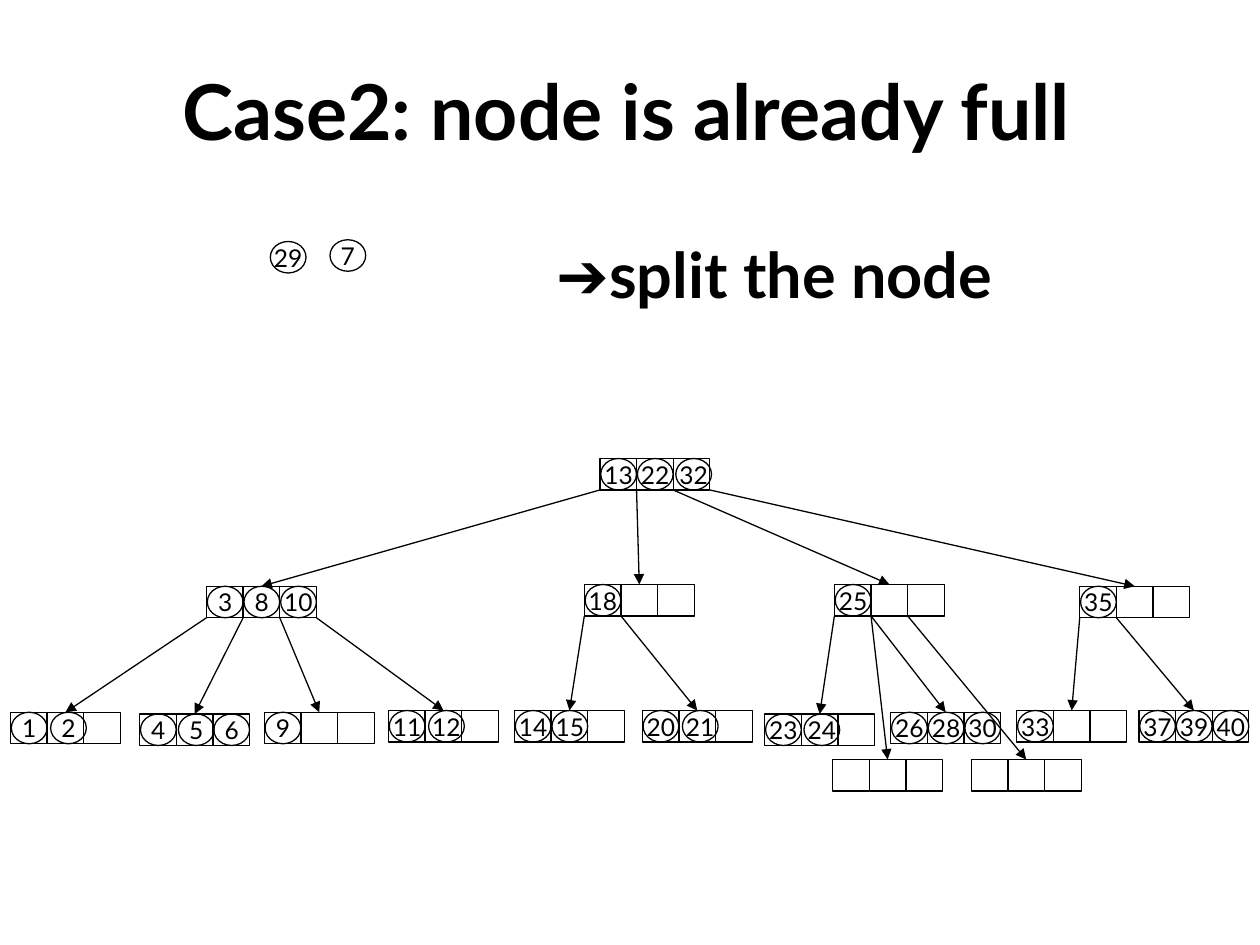
"""Build a slide showing a B-tree in which a full node is split."""
import pptx
import pptx.dml.color
import pptx.enum.shapes
import pptx.enum.text
import pptx.oxml
import pptx.oxml.ns
import pptx.util

Pt = pptx.util.Pt
BLACK = pptx.dml.color.RGBColor(0, 0, 0)
SHAPES = pptx.enum.shapes.MSO_SHAPE
ALIGN = pptx.enum.text.PP_ALIGN
MIDDLE = pptx.enum.text.MSO_ANCHOR.MIDDLE
SLOTS = 3
CELL_WIDTH, CELL_HEIGHT = 20.95, 18
KEY_WIDTH, KEY_INSET = 20.4, 0.5
NUDGES = {2: 1.5, 5: 0.7, 12: 1.5, 21: 1.5, 24: 1, 32: 1}

TREE = (342.8, 262, [13, 22, 32], [
    (0, (118, 335, [3, 8, 10], [
        (0, (6, 407, [1, 2], [])),
        (1, (79.8, 408, [4, 5, 6], [])),
        (2, (151, 407, [9], [])),
        (3, (222, 406, [11, 12], [])),
    ])),
    (1, (333.9, 334, [18], [
        (0, (294, 406, [14, 15], [])),
        (1, (367, 406, [20, 21], [])),
    ])),
    (2, (476.8, 334, [25], [
        (0, (437, 408, [23, 24], [])),
        (1, (509, 407, [26, 28, 30], [])),
        (1, (475.8, 434, [], [])),
        (2, (555, 434, [], [])),
    ])),
    (3, (617, 335, [35], [
        (0, (581, 406, [33], [])),
        (1, (650.8, 406, [37, 39, 40], [])),
    ])),
])


class TreePage:
    """Holds the style and the current slide of a tree diagram."""

    key_frame = {"margin_left": 0, "margin_right": 0, "margin_top": 0, "margin_bottom": 0,
                 "vertical_anchor": MIDDLE, "word_wrap": False}
    text_frame = {"vertical_anchor": MIDDLE, "word_wrap": True}
    key_font = {"name": "Lato", "size": Pt(14), "bold": False}
    title_font = {"name": "Lato", "size": Pt(44), "bold": True}
    note_font = {"name": "Lato", "size": Pt(36), "bold": True}
    symbol_font = {**note_font, "name": "Arial"}
    line_format = {"width": Pt(0.75)}

    def __init__(self, page):
        self.page = page

    def style(self, target, values):
        for name, value in values.items():
            setattr(target, name, value)

    def label(self, box, frame, align, spans):
        self.style(box.text_frame, frame)
        para = box.text_frame.paragraphs[0]
        para.alignment = align
        for text, font in spans:
            span = para.add_run()
            span.text = text
            self.style(span.font, font)
            span.font.color.rgb = BLACK

    def stroke(self, line):
        line.color.rgb = BLACK
        self.style(line, self.line_format)

    def text(self, left, top, width, height, align, spans):
        box = self.page.shapes.add_textbox(Pt(left), Pt(top), Pt(width), Pt(height))
        self.label(box, self.text_frame, align, spans)

    def outline(self, shapes, kind, left, top, width):
        shape = shapes.add_shape(kind, Pt(left), Pt(top), Pt(width), Pt(CELL_HEIGHT))
        shape.shadow.inherit = False
        shape.fill.background()
        self.stroke(shape.line)
        return shape

    def key(self, shapes, left, top, value):
        circle = self.outline(shapes, SHAPES.OVAL, left, top, KEY_WIDTH)
        self.label(circle, self.key_frame, ALIGN.CENTER, [(str(value), self.key_font)])

    def arrow(self, start, end):
        connector = self.page.shapes.add_connector(
            pptx.enum.shapes.MSO_CONNECTOR.STRAIGHT, *map(Pt, start + end))
        self.stroke(connector.line)
        properties = connector.element.spPr
        namespace = pptx.oxml.ns.nsdecls("a")
        properties.find(pptx.oxml.ns.qn("a:ln")).append(
            pptx.oxml.parse_xml(f'<a:tailEnd {namespace} type="triangle"/>'))
        properties.append(pptx.oxml.parse_xml(f"<a:effectLst {namespace}/>"))

    def node(self, left, top, keys, children):
        shapes = self.page.shapes.add_group_shape().shapes
        for slot in range(SLOTS):
            self.outline(shapes, SHAPES.RECTANGLE, left + slot * CELL_WIDTH, top, CELL_WIDTH)
        for slot, value in enumerate(keys):
            inset = KEY_INSET + NUDGES.get(value, 0)
            self.key(shapes, left + slot * CELL_WIDTH + inset, top, value)
        for slot, child in children:
            self.node(*child)
            self.arrow((left + slot * CELL_WIDTH, top + CELL_HEIGHT),
                       (child[0] + SLOTS * CELL_WIDTH / 2, child[1]))


def main():
    deck = pptx.Presentation()
    deck.slide_width, deck.slide_height = Pt(720), Pt(540)
    page = TreePage(deck.slides.add_slide(deck.slide_layouts[6]))
    page.text(31.7, 33.1, 653, 59, ALIGN.CENTER,
              [("Case2: node is already full", page.title_font)])
    page.text(311, 126.7, 383.8, 59, ALIGN.LEFT,
              [("➔", page.symbol_font), ("split the node", page.note_font)])
    page.key(page.page.shapes, 154.5, 138, 29)
    page.key(page.page.shapes, 188.6, 137, 7)
    page.node(*TREE)
    deck.save("out.pptx")


if __name__ == "__main__":
    main()
